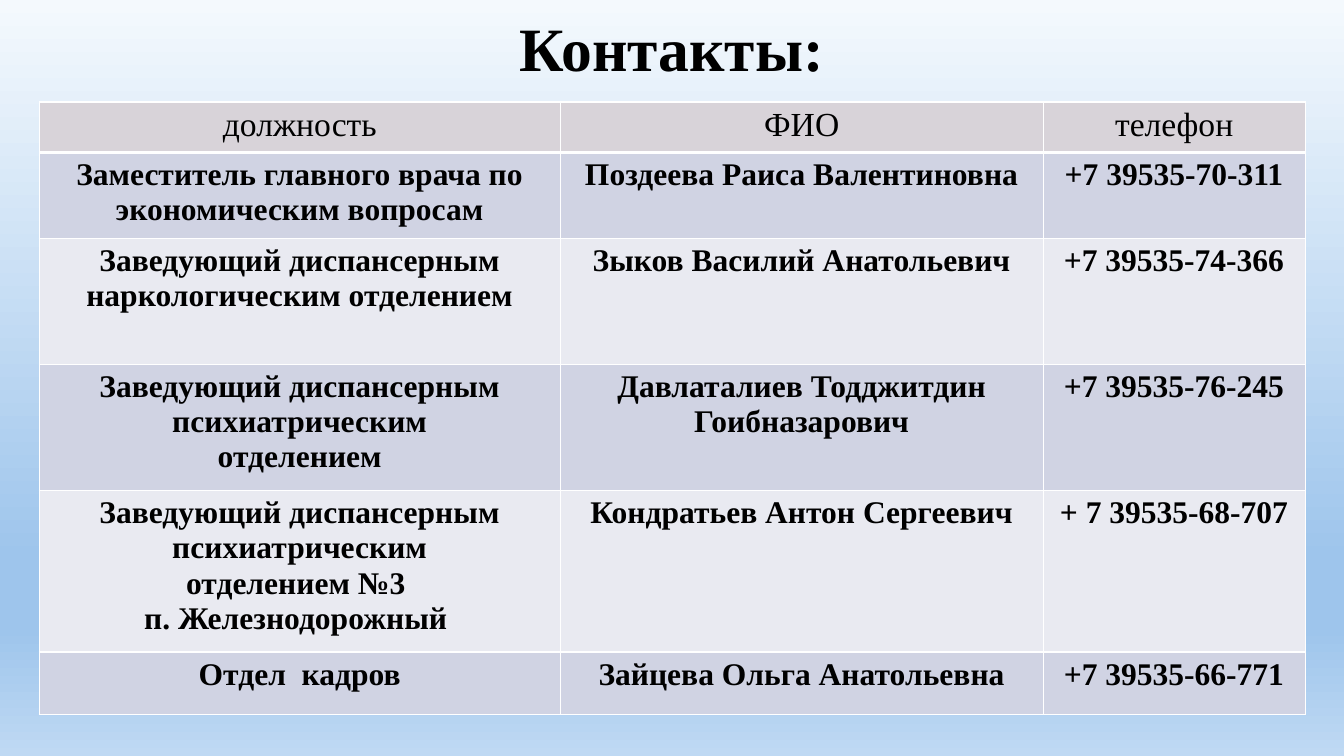
from copy import deepcopy
from dataclasses import dataclass

from lxml.etree import SubElement
from pptx import Presentation
from pptx.dml.color import RGBColor
from pptx.enum.text import MSO_ANCHOR as Anchor, PP_ALIGN as Align
from pptx.oxml.ns import qn
from pptx.slide import Slide
from pptx.table import _Cell as Cell
from pptx.text.text import TextFrame
from pptx.util import Cm, Pt

FONT = "Times New Roman"
HEADINGS = ("должность", "ФИО", "телефон")
COLUMN_WIDTHS = (13.13, 12.17, 6.6)
HEADER_HEIGHT = 1.19
HEADER_FILL = "D8D3D9"
BAND_FILLS = ("D0D3E3", "E9EAF1")
SKY = ((0, "F4F9FD"), (0.74, "9EC5EC"), (0.83, "9EC5EC"), (1, "BFD9F3"))


@dataclass(frozen=True)
class Contact:
    post: str
    person: str
    phone: str
    height: float


@dataclass(frozen=True)
class TextStyle:
    size: float
    bold: bool


TITLE_STYLE = TextStyle(44, True)
HEADER_STYLE = TextStyle(24, False)
CONTACT_STYLE = TextStyle(22.5, True)

CONTACTS = (
    Contact("Заместитель главного врача по экономическим вопросам",
            "Поздеева Раиса Валентиновна", "+7 39535-70-311", 2.03),
    Contact("Заведующий диспансерным наркологическим отделением",
            "Зыков Василий Анатольевич", "+7 39535-74-366", 3.18),
    Contact("Заведующий диспансерным психиатрическим\nотделением",
            "Давлаталиев Тодджитдин Гоибназарович", "+7 39535-76-245", 3.18),
    Contact("Заведующий диспансерным психиатрическим\nотделением №3 \nп. Железнодорожный ",
            "Кондратьев Антон Сергеевич", "+ 7 39535-68-707", 3.78),
    Contact("Отдел  кадров", "Зайцева Ольга Анатольевна", "+7 39535-66-771", 1.58),
)


def color(value: str) -> RGBColor:
    return RGBColor.from_string(value)


def write(frame: TextFrame, text: str, style: TextStyle) -> None:
    for index, line in enumerate(text.split("\n")):
        paragraph = frame.add_paragraph() if index else frame.paragraphs[0]
        paragraph.alignment = Align.CENTER
        run = paragraph.add_run()
        run.text = line
        run.font.name = FONT
        run.font.size = Pt(style.size)
        run.font.bold = style.bold
        run.font.color.rgb = color("000000")


def add_borders(cell: Cell, bottom: float, top: float) -> None:
    properties = cell._tc.get_or_add_tcPr()
    for side, width in (("L", 1), ("R", 1), ("T", top), ("B", bottom)):
        border = SubElement(properties, qn(f"a:ln{side}"), w=str(Pt(width)))
        fill = SubElement(border, qn("a:solidFill"))
        SubElement(fill, qn("a:srgbClr"), val="FFFFFF")


def paint_background(slide: Slide) -> None:
    fill = slide.background.fill
    fill.gradient()
    fill.gradient_angle = 270
    stop_list = slide.element.find(".//" + qn("a:gsLst"))
    while len(stop_list) < len(SKY):
        stop_list.append(deepcopy(stop_list[0]))
    for stop, (position, shade) in zip(fill.gradient_stops, SKY):
        stop.position = position
        stop.color.rgb = color(shade)


def add_title(slide: Slide) -> None:
    title = slide.shapes.add_textbox(Cm(2.33), Cm(0.64), Cm(29.21), Cm(1.3))
    frame = title.text_frame
    frame.word_wrap = True
    frame.vertical_anchor = Anchor.MIDDLE
    write(frame, "Контакты:", TITLE_STYLE)
    frame.paragraphs[0].line_spacing = 0.9


def add_contacts(slide: Slide) -> None:
    heights = (HEADER_HEIGHT, *(contact.height for contact in CONTACTS))
    rows = (HEADINGS, *((c.post, c.person, c.phone) for c in CONTACTS))
    table = slide.shapes.add_table(
        len(rows), len(HEADINGS), Cm(0.99), Cm(2.57),
        Cm(sum(COLUMN_WIDTHS)), Cm(sum(heights))).table
    for column, width in zip(table.columns, COLUMN_WIDTHS):
        column.width = Cm(width)
    for index, (texts, height) in enumerate(zip(rows, heights)):
        table.rows[index].height = Cm(height)
        is_header = index == 0
        shade = HEADER_FILL if is_header else BAND_FILLS[(index - 1) % 2]
        style = HEADER_STYLE if is_header else CONTACT_STYLE
        for cell, text in zip(table.rows[index].cells, texts):
            add_borders(cell, bottom=3 if is_header else 1, top=3 if index == 1 else 1)
            cell.fill.solid()
            cell.fill.fore_color.rgb = color(shade)
            write(cell.text_frame, text, style)


def main() -> None:
    deck = Presentation()
    deck.slide_width, deck.slide_height = Cm(33.87), Cm(19.05)
    slide = deck.slides.add_slide(deck.slide_layouts[6])
    paint_background(slide)
    add_title(slide)
    add_contacts(slide)
    deck.save("out.pptx")


if __name__ == "__main__":
    main()
